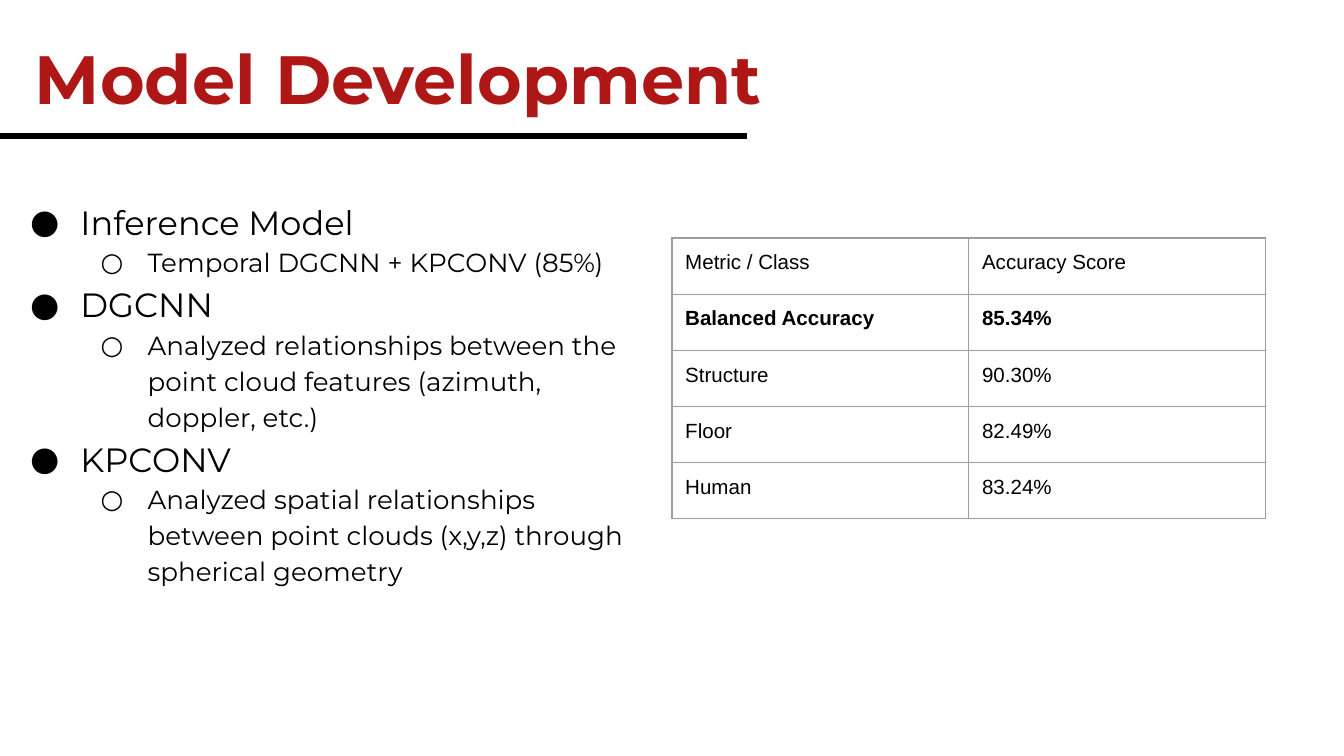
from collections import namedtuple
from dataclasses import dataclass

from lxml.etree import SubElement
from pptx import Presentation
from pptx.dml.color import RGBColor
from pptx.enum.shapes import MSO_CONNECTOR as Connector
from pptx.enum.text import MSO_ANCHOR as Anchor, MSO_AUTO_SIZE as AutoSize, PP_ALIGN as Align
from pptx.oxml.ns import qn
from pptx.util import Cm, Pt

Box = namedtuple("Box", "left top width height")


@dataclass(frozen=True)
class Theme:
    heading_font: str = "Montserrat"
    table_font: str = "Arial"
    red: str = "AF1717"
    black: str = "000000"
    gray: str = "9E9E9E"
    title_size: float = 36.6
    topic_size: float = 18
    detail_size: float = 14
    table_size: float = 11
    rule_width: float = 3
    border_width: float = 0.75


THEME = Theme()
INSET = Cm(0.25)
MARGINS = dict.fromkeys(("margin_left", "margin_top", "margin_right", "margin_bottom"), INSET)
FRAME = {**MARGINS, "word_wrap": True, "auto_size": AutoSize.NONE, "vertical_anchor": Anchor.TOP}
LEVELS = (
    {"bullet": "●", "size": THEME.topic_size, "indent": Cm(1.27), "hanging": Cm(0.95)},
    {"bullet": "○", "size": THEME.detail_size, "indent": Cm(2.54), "hanging": Cm(0.89)},
)
TOPICS = (
    ("Inference Model", "Temporal DGCNN + KPCONV (85%)"),
    ("DGCNN", "Analyzed relationships between the point cloud features (azimuth, doppler, etc.)"),
    ("KPCONV", "Analyzed spatial relationships between point clouds (x,y,z) through spherical geometry"),
)
SCORES = (
    ("Metric / Class", "Accuracy Score"),
    ("Balanced Accuracy", "85.34%"),
    ("Structure", "90.30%"),
    ("Floor", "82.49%"),
    ("Human", "83.24%"),
)
BOLD_ROW = 1


def apply(target, values):
    for name, value in values.items():
        setattr(target, name, value)


def format_font(font, name, size, color, bold=False):
    apply(font, {"name": name, "size": Pt(size), "bold": bold})
    font.color.rgb = RGBColor.from_string(color)


def add_color(parent, tag, color):
    SubElement(SubElement(parent, qn(tag)), qn("a:srgbClr"), val=color)


def place_title(slide, box):
    title = slide.shapes.title
    apply(title, box._asdict())
    apply(title.text_frame, FRAME)
    title.text_frame.text = "Model Development"
    paragraph = title.text_frame.paragraphs[0]
    paragraph.alignment = Align.LEFT
    format_font(paragraph.runs[0].font, THEME.heading_font, THEME.title_size, THEME.red, True)


def add_rule(slide, box):
    rule = slide.shapes.add_connector(
        Connector.STRAIGHT, box.left, box.top, box.left + box.width, box.top + box.height)
    rule.line.color.rgb = RGBColor.from_string(THEME.black)
    rule.line.width = Pt(THEME.rule_width)
    SubElement(rule._element.spPr, qn("a:effectLst"))


def format_item(paragraph, level, text):
    style = LEVELS[level]
    properties = paragraph._p.get_or_add_pPr()
    properties.set("marL", str(style["indent"]))
    properties.set("indent", str(-style["hanging"]))
    add_color(properties, "a:buClr", THEME.black)
    SubElement(properties, qn("a:buFont"), typeface=THEME.heading_font)
    SubElement(properties, qn("a:buChar"), char=style["bullet"])
    apply(paragraph, {"text": text, "level": level, "line_spacing": 1.15,
                      "space_before": Pt(0), "alignment": Align.LEFT})
    format_font(paragraph.runs[0].font, THEME.heading_font, style["size"], THEME.black)


def place_topics(slide, box):
    body = slide.placeholders[1]
    apply(body, box._asdict())
    frame = body.text_frame
    apply(frame, FRAME)
    items = [(level, text) for topic in TOPICS for level, text in enumerate(topic)]
    for index, (level, text) in enumerate(items):
        paragraph = frame.add_paragraph() if index else frame.paragraphs[0]
        format_item(paragraph, level, text)


def format_cell(cell, text, bold):
    apply(cell, {**MARGINS, "text": text, "vertical_anchor": Anchor.TOP})
    format_font(cell.text_frame.paragraphs[0].runs[0].font,
                THEME.table_font, THEME.table_size, THEME.black, bold)
    properties = cell._tc.get_or_add_tcPr()
    for side in ("a:lnL", "a:lnR", "a:lnT", "a:lnB"):
        border = SubElement(properties, qn(side), w=str(Pt(THEME.border_width)))
        add_color(border, "a:solidFill", THEME.gray)
    cell.fill.background()


def add_scores(slide, box):
    table = slide.shapes.add_table(len(SCORES), len(SCORES[0]), *box).table
    apply(table, {"first_row": False, "horz_banding": False})
    for row_index, row in enumerate(SCORES):
        for column_index, text in enumerate(row):
            format_cell(table.cell(row_index, column_index), text, row_index == BOLD_ROW)


def build_model_slide(presentation, box):
    slide = presentation.slides.add_slide(presentation.slide_layouts[1])
    left, top = box.left, box.top
    place_topics(slide, Box(left, top + Cm(3.45), Cm(12.12), Cm(10.36)))
    place_title(slide, Box(left + Cm(0.41), top + Cm(0.43), Cm(23.67), Cm(1.6)))
    add_rule(slide, Box(left, top + Cm(2.57), Cm(14.12), 0))
    add_scores(slide, Box(left + box.width // 2, top + Cm(4.5), Cm(11.22), Cm(5.3)))


def main():
    presentation = Presentation()
    apply(presentation, {"slide_width": Cm(25.4), "slide_height": Cm(14.29)})
    build_model_slide(
        presentation, Box(0, 0, presentation.slide_width, presentation.slide_height))
    presentation.save("out.pptx")


if __name__ == "__main__":
    main()
